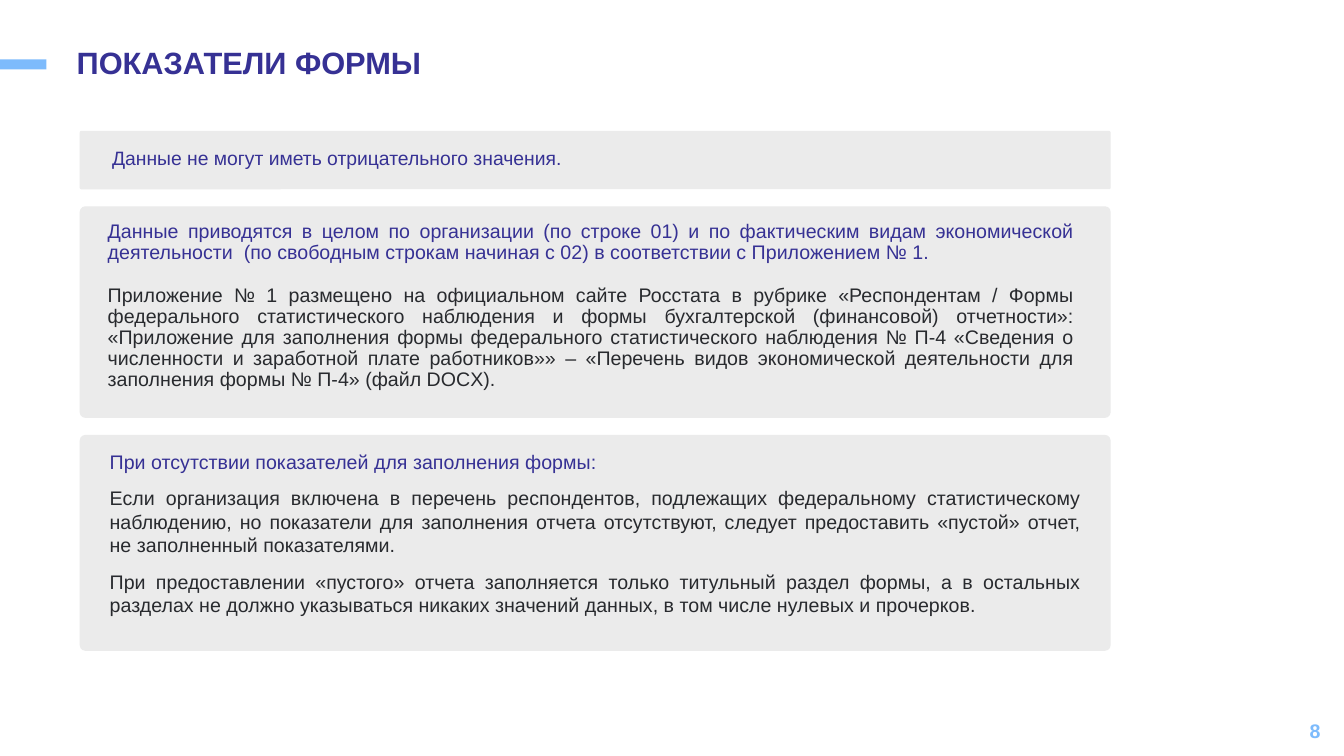
import pptx
import pptx.util
import pptx.dml.color
import pptx.enum.shapes
import pptx.enum.text
import pptx.oxml
from dataclasses import dataclass

Cm, Pt = pptx.util.Cm, pptx.util.Pt
ALIGN = pptx.enum.text.PP_ALIGN
ANCHOR = pptx.enum.text.MSO_ANCHOR
SHAPE = pptx.enum.shapes.MSO_SHAPE


@dataclass(frozen=True)
class Theme:
    font: str = "Arial"
    accent: str = "363194"
    text: str = "282A2E"
    panel: str = "EBEBEB"
    light: str = "7DBBFC"
    title_size: float = 22
    lead_size: float = 13.8
    body_size: float = 14


THEME = Theme()
TITLE = "ПОКАЗАТЕЛИ ФОРМЫ"
PAGE = "8"
PANELS = [
    dict(
        height=1.47, box=(2.57, 3.63, 22.33, 0.81),
        lead="Данные не могут иметь отрицательного значения.",
        details=[],
        lead_format=dict(size=THEME.lead_size, spacing=0.9),
    ),
    dict(
        height=5.33, box=(2.46, 5.46, 24.87, 5.51),
        lead="Данные приводятся в целом по организации (по строке 01) и по фактическим видам "
             "экономической деятельности  (по свободным строкам начиная с 02) в соответствии "
             "с Приложением № 1.",
        details=[
            "Приложение № 1 размещено на официальном сайте Росстата в рубрике «Респондентам / "
            "Формы федерального статистического наблюдения и формы бухгалтерской (финансовой) "
            "отчетности»: «Приложение для заполнения формы федерального статистического "
            "наблюдения № П-4 «Сведения о численности и заработной плате работников»» – "
            "«Перечень видов экономической деятельности для заполнения формы № П-4» (файл DOCX).",
        ],
        lead_format=dict(align=ALIGN.JUSTIFY, spacing=0.9),
        detail_format=dict(spacing=0.9, before=15),
    ),
    dict(
        height=5.44, box=(2.51, 11.2, 24.99, 4.95),
        lead="При отсутствии показателей для заполнения формы:",
        details=[
            "Если организация включена в перечень респондентов, подлежащих федеральному "
            "статистическому наблюдению, но показатели для заполнения отчета отсутствуют, "
            "следует предоставить «пустой» отчет, не заполненный показателями.",
            "При предоставлении «пустого» отчета заполняется только титульный раздел формы, "
            "а в остальных разделах не должно указываться никаких значений данных, в том числе "
            "нулевых и прочерков.",
        ],
        lead_format={},
        detail_format=dict(before=9.3),
    ),
]
PANEL_LEFT, PANEL_TOP, PANEL_WIDTH, PANEL_GAP = 2.01, 3.3, 25.98, 0.43


def rgb(value):
    return pptx.dml.color.RGBColor.from_string(value)


def place(sp, left, top, width, height):
    sp.left, sp.top, sp.width, sp.height = Cm(left), Cm(top), Cm(width), Cm(height)


def prepare(sp, anchor=ANCHOR.TOP):
    tf = sp.text_frame
    tf.word_wrap = True
    tf.auto_size = pptx.enum.text.MSO_AUTO_SIZE.NONE
    tf.vertical_anchor = anchor
    return tf


def write(tf, text, size=THEME.body_size, color=THEME.accent, bold=False,
          align=ALIGN.LEFT, spacing=1.0, before=0):
    p = tf.add_paragraph() if tf.text else tf.paragraphs[0]
    pPr = p._p.get_or_add_pPr()
    pPr.set("marL", "0")
    pPr.set("indent", "0")
    pPr.append(pptx.oxml.parse_xml(
        '<a:buNone xmlns:a="http://schemas.openxmlformats.org/drawingml/2006/main"/>'))
    p.alignment, p.line_spacing = align, spacing
    p.space_before, p.space_after = Pt(before), Pt(0)
    r = p.add_run()
    r.text = text
    r.font.name, r.font.size, r.font.bold = THEME.font, Pt(size), bold
    r.font.color.rgb = rgb(color)


def add_block(s, kind, box, color):
    sp = s.shapes.add_shape(kind, *map(Cm, box))
    sp.shadow.inherit = False
    sp.fill.solid()
    sp.fill.fore_color.rgb = rgb(color)
    sp.line.fill.background()
    return sp


def main():
    prs = pptx.Presentation()
    prs.slide_width, prs.slide_height = Cm(33.87), Cm(19.05)
    s = prs.slides.add_slide(prs.slide_layouts.get_by_name("Comparison"))
    title = s.shapes.title
    *bodies, spare = [sp for sp in s.placeholders if sp != title]
    spare.element.getparent().remove(spare.element)

    place(title, 1.68, 1.09, 26.44, 1.45)
    write(prepare(title), TITLE, size=THEME.title_size, bold=True, spacing=0.9)
    add_block(s, SHAPE.RECTANGLE, (0, 1.5, 1.17, 0.25), THEME.light)

    top = PANEL_TOP
    for panel, body in zip(PANELS, bodies):
        sp = add_block(s, SHAPE.ROUNDED_RECTANGLE,
                       (PANEL_LEFT, top, PANEL_WIDTH, panel["height"]), THEME.panel)
        sp.adjustments[0] = 0.026
        body.element.addprevious(sp.element)
        top += panel["height"] + PANEL_GAP

        place(body, *panel["box"])
        tf = prepare(body)
        write(tf, panel["lead"], **panel["lead_format"])
        for text in panel["details"]:
            write(tf, text, color=THEME.text, align=ALIGN.JUSTIFY, **panel["detail_format"])

    page = s.shapes.add_textbox(Cm(25.91), Cm(17.91), Cm(7.62), Cm(1.02))
    write(prepare(page, ANCHOR.MIDDLE), PAGE, color=THEME.light, bold=True, align=ALIGN.RIGHT)
    prs.save("out.pptx")


if __name__ == "__main__":
    main()
